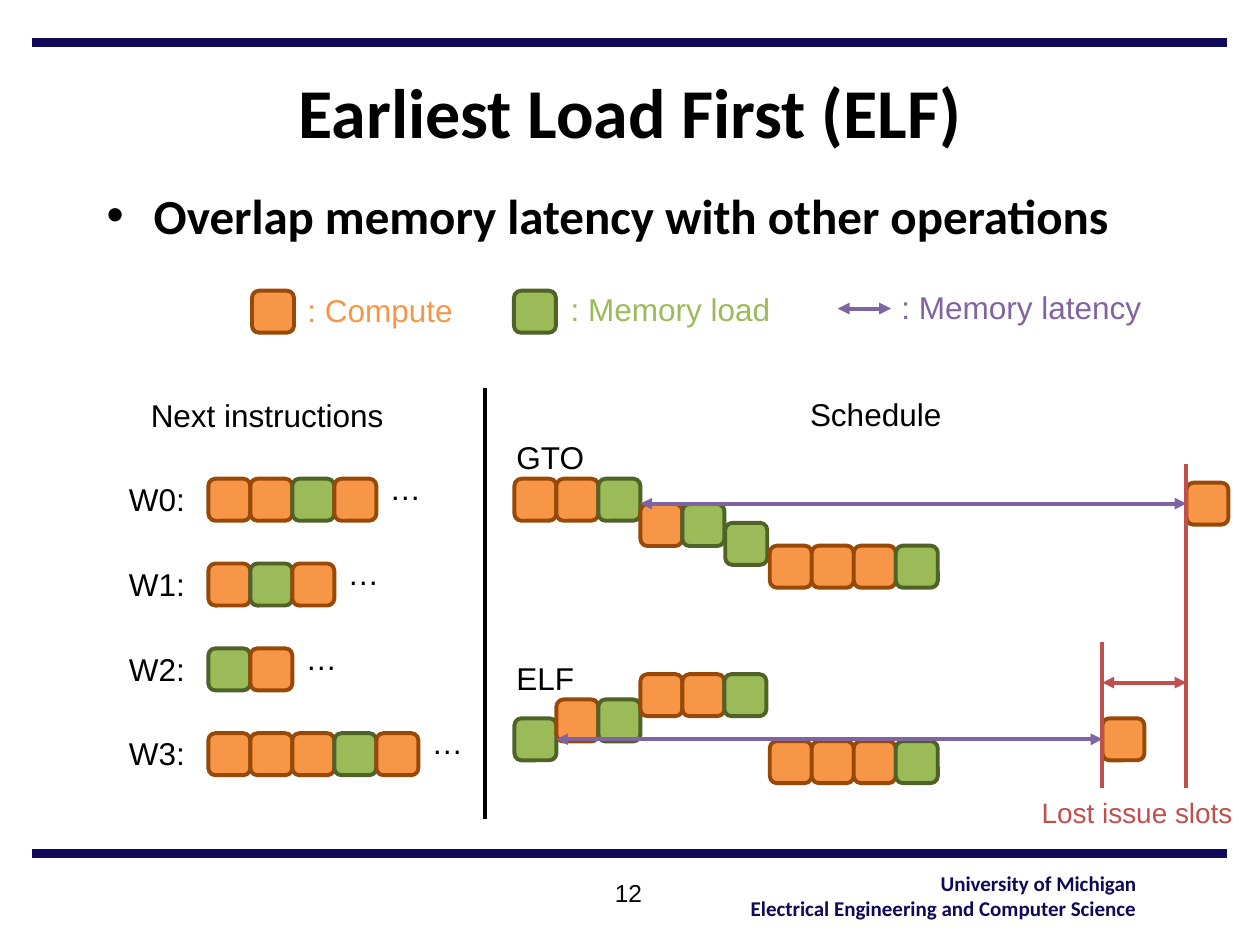
from dataclasses import dataclass

from lxml import etree
from pptx import Presentation
from pptx.dml.color import RGBColor
from pptx.enum.shapes import MSO_CONNECTOR, MSO_SHAPE
from pptx.enum.text import MSO_ANCHOR, MSO_AUTO_SIZE, PP_ALIGN
from pptx.oxml.ns import qn
from pptx.util import Cm, Pt

LEFT, CENTER, RIGHT = PP_ALIGN.LEFT, PP_ALIGN.CENTER, PP_ALIGN.RIGHT
MIDDLE = MSO_ANCHOR.MIDDLE
GROW = MSO_AUTO_SIZE.SHAPE_TO_FIT_TEXT
ROUNDED = MSO_SHAPE.ROUNDED_RECTANGLE
STRAIGHT = MSO_CONNECTOR.STRAIGHT
LEFT_SIDE, RIGHT_SIDE = 1, 3
TITLE_ONLY = 5
CELL = 2.54 / 3
LABEL_HEIGHT = 1.02


@dataclass(frozen=True)
class Theme:
    heading_font: str = "Calibri"
    label_font: str = "Arial"
    ink: str = "000000"
    navy: str = "0F0958"
    compute: str = "F79646"
    compute_edge: str = "984807"
    load: str = "9BBB59"
    load_edge: str = "4F6228"
    latency: str = "8064A2"
    lost: str = "C0504D"
    title_size: int = 40
    body_size: int = 28
    label_size: int = 18
    lost_size: int = 16
    number_size: int = 14
    footer_size: int = 12
    line_width: float = 2.25
    rule_width: int = 5


@dataclass(frozen=True)
class Box:
    left: float
    top: float
    width: float
    height: float

    def inner(self, x, y, width, height):
        return Box(self.left + x, self.top + y, width, height)

    def lengths(self):
        return Cm(self.left), Cm(self.top), Cm(self.width), Cm(self.height)


THEME = Theme()
CELL_COLORS = {
    "C": (THEME.compute, THEME.compute_edge),
    "L": (THEME.load, THEME.load_edge),
}


def style(para, size, color=THEME.ink, name=THEME.label_font, bold=False, align=LEFT):
    para.alignment = align
    para.font.name = name
    para.font.size = Pt(size)
    para.font.bold = bold
    para.font.color.rgb = RGBColor.from_string(color)


def add_text(page, box, text, size=THEME.label_size, wrap=False, **look):
    frame = page.shapes.add_textbox(*box.lengths()).text_frame
    frame.word_wrap = wrap
    if not wrap:
        frame.auto_size = GROW
    frame.text = text
    for para in frame.paragraphs:
        style(para, size, **look)
    return frame


def add_cell(page, box, x, y, kind):
    fill, edge = CELL_COLORS[kind]
    cell = page.shapes.add_shape(ROUNDED, *box.inner(x, y, CELL, CELL).lengths())
    cell.shadow.inherit = False
    cell.fill.solid()
    cell.fill.fore_color.rgb = RGBColor.from_string(fill)
    cell.line.color.rgb = RGBColor.from_string(edge)
    cell.line.width = Pt(THEME.line_width)
    return cell


def add_cells(page, box, x, y, kinds):
    return [add_cell(page, box, x + i * CELL, y, kind) for i, kind in enumerate(kinds)]


def add_line(page, box, start, end, color, width=THEME.line_width, arrows=False):
    points = [Cm(v) for x, y in (start, end) for v in (box.left + x, box.top + y)]
    line = page.shapes.add_connector(STRAIGHT, *points)
    line.line.color.rgb = RGBColor.from_string(color)
    line.line.width = Pt(width)
    if arrows:
        outline = line.line._get_or_add_ln()
        for tag in ("a:headEnd", "a:tailEnd"):
            etree.SubElement(outline, qn(tag), type="triangle")
    etree.SubElement(line._element.spPr, qn("a:effectLst"))
    return line


def add_frame(page, box):
    for y in (0, box.height):
        add_line(page, box, (0, y), (box.width, y), THEME.navy, THEME.rule_width)
    add_text(page, box.inner(14.14, 16.56, 8.38, 1.27),
             "University of Michigan\nElectrical Engineering and Computer Science",
             THEME.footer_size, color=THEME.navy, name=THEME.heading_font,
             bold=True, align=RIGHT)
    add_text(page, box.inner(9.39, 16.72, 5.28, 1.27), "12", THEME.number_size,
             wrap=True, align=CENTER)


def add_heading(page, box):
    title = page.shapes.title
    title.left, title.top, title.width, title.height = box.inner(0, 0, box.width, 2.31).lengths()
    title.text_frame.text = "Earliest Load First (ELF)"
    title.text_frame.vertical_anchor = MIDDLE
    style(title.text_frame.paragraphs[0], THEME.title_size, name=THEME.heading_font,
          bold=True, align=CENTER)

    frame = add_text(page, box.inner(0, 2.54, box.width, 1.47),
                     "Overlap memory latency with other operations",
                     THEME.body_size, wrap=True, name=THEME.heading_font, bold=True)
    props = frame.paragraphs[0]._p.get_or_add_pPr()
    props.set("marL", str(Cm(0.95)))
    props.set("indent", str(-Cm(0.95)))
    bullet_font = etree.Element(qn("a:buFont"), typeface=THEME.label_font)
    bullet = etree.Element(qn("a:buChar"), char="•")
    props.insert(0, bullet_font)
    props.insert(1, bullet)


def add_legend(page, box):
    add_cell(page, box, 0, 0.2, "C")
    add_cell(page, box, 5.28, 0.2, "L")
    add_line(page, box, (11.81, 0.56), (12.88, 0.56), THEME.latency, arrows=True)
    for text, x, y, width, color in (
        (": Compute", 0.84, 0.08, 3.48, THEME.compute),
        (": Memory load", 6.15, 0.06, 4.57, THEME.load),
        (": Memory latency", 12.82, 0.02, 5.38, THEME.latency),
    ):
        add_text(page, box.inner(x, y, width, LABEL_HEIGHT), text, color=color, align=CENTER)


def add_instructions(page, box):
    add_text(page, box.inner(0.45, -0.02, 5.26, LABEL_HEIGHT), "Next instructions")
    for warp, kinds in enumerate(("CCLC", "CLC", "LC", "CCCLC")):
        y = 1.78 + warp * 1.71
        add_text(page, box.inner(0, y - 0.1, 1.65, LABEL_HEIGHT), f"W{warp}:", align=CENTER)
        add_cells(page, box, 1.86, y, kinds)
        dots_x = 1.88 + len(kinds) * CELL
        add_text(page, box.inner(dots_x, y - 0.32, 1.14, LABEL_HEIGHT), "…")
    add_line(page, box, (box.width, -0.05), (box.width, box.height), THEME.ink)


def add_lane(page, box, name, runs):
    add_text(page, box.inner(0, 0, 2.2, LABEL_HEIGHT), name)
    placed = [add_cells(page, box, 0.21 + slot * CELL, y, kinds) for slot, y, kinds in runs]
    first_slot, first_y, first_kinds = runs[0]
    last_slot, last_y, _ = runs[-1]
    start_x = 0.21 + (first_slot + len(first_kinds)) * CELL
    middle = last_y + CELL / 2
    latency = add_line(page, box, (start_x, middle), (0.21 + last_slot * CELL, middle),
                       THEME.latency, arrows=True)
    if first_y == last_y:
        latency.begin_connect(placed[0][-1], RIGHT_SIDE)
    latency.end_connect(placed[-1][0], LEFT_SIDE)


def add_schedule(page, box):
    add_text(page, box.inner(5.92, 0.02, 3.18, LABEL_HEIGHT), "Schedule")
    add_lane(page, box.inner(0, 0.89, box.width, 3.2), "GTO", (
        (0, 0.94, "CCL"), (3, 1.45, "CL"), (5.02, 1.83, "L"),
        (6.08, 2.29, "CCCL"), (16, 1.02, "C")))
    add_lane(page, box.inner(0, 5.34, box.width, 2.7), "ELF", (
        (0, 1.32, "L"), (1, 0.94, "CL"), (3, 0.43, "CCL"),
        (6.08, 1.78, "CCCL"), (14, 1.32, "C")))

    elf_end, gto_end = (0.21 + slot * CELL for slot in (14, 16))
    for x, y in ((elf_end, 5.13), (gto_end, 1.53)):
        add_line(page, box, (x, y), (x, 8.06), THEME.lost)
    add_line(page, box, (elf_end, 5.94), (gto_end, 5.94), THEME.lost, arrows=True)
    add_text(page, box.inner(10.59, 8.09, 4.42, 0.94), "Lost issue slots",
             THEME.lost_size, color=THEME.lost)


def main():
    deck = Presentation()
    deck.slide_width, deck.slide_height = Cm(25.4), Cm(19.05)
    page = deck.slides.add_slide(deck.slide_layouts[TITLE_ONLY])
    add_frame(page, Box(0.64, 0.86, 24.1, 16.34))
    add_heading(page, Box(1.9, 1.07, 21.6, 4.01))
    add_legend(page, Box(5.08, 5.66, 18.2, 1.1))
    add_instructions(page, Box(2.34, 7.87, 7.44, 8.64))
    add_schedule(page, Box(10.16, 7.82, 15.01, 9.03))
    deck.save("out.pptx")


if __name__ == "__main__":
    main()
